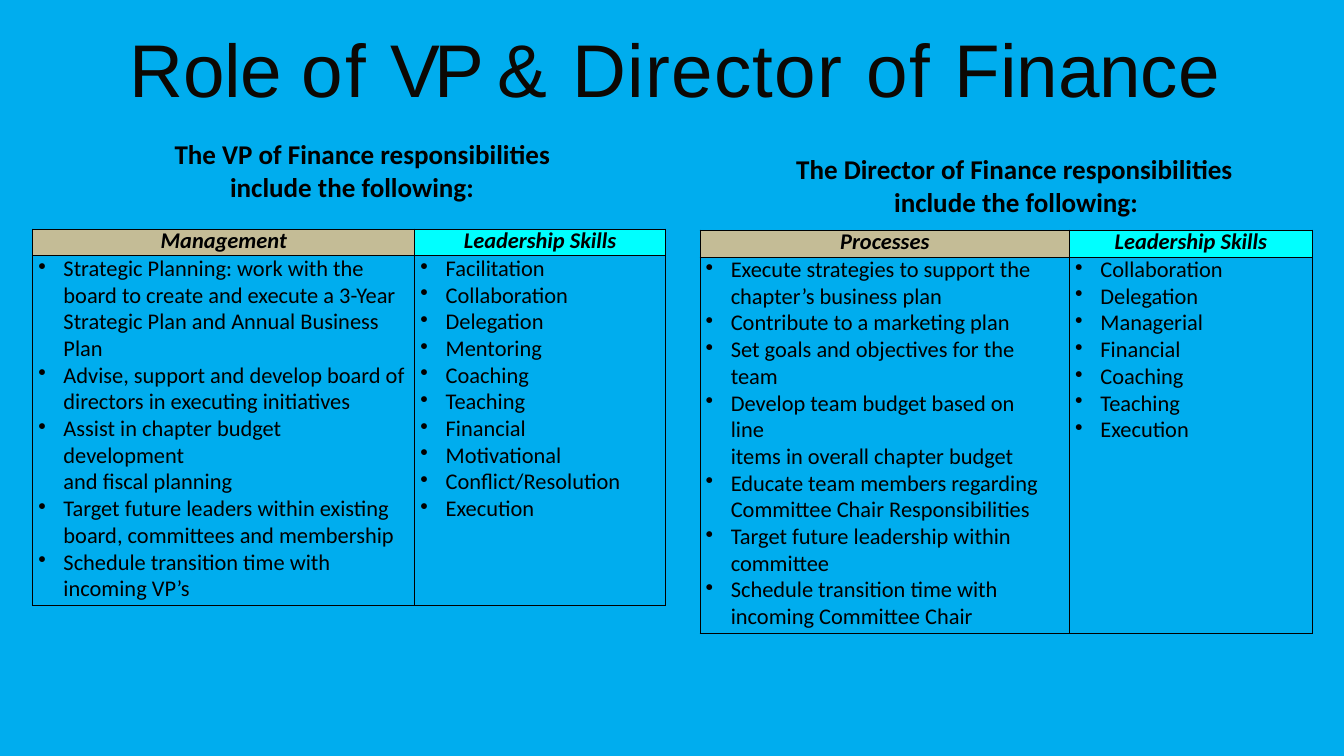
from pptx import Presentation
from pptx.dml.color import RGBColor
from pptx.enum.shapes import MSO_SHAPE
from pptx.enum.text import MSO_ANCHOR, MSO_AUTO_SIZE, PP_ALIGN
from pptx.oxml import parse_xml
from pptx.oxml.ns import nsdecls
from pptx.util import Pt

COLORS = {"sky": "00ADEE", "ink": "000000", "title": "0C0804", "tan": "C4BC96", "aqua": "00FFFF"}
WIDTH, HEIGHT = 1440, 810

TITLE = [("Role ", -0.6), ("of ", 1.8), ("VP ", -6), ("& ", 2.1),
         ("Director ", 1.4), ("of ", 1.9), ("Finance", -0.1)]

DIRECTOR_PROCESSES = [
    "•Execute strategies to support the", "chapter’s business plan",
    "•Contribute to a marketing plan",
    "•Set goals and objectives for the\vteam",
    "•Develop team budget based on\vline", "items in overall chapter budget",
    "•Educate team members regarding Committee Chair Responsibilities",
    "•Target future leadership within committee",
    "•Schedule transition time with", "incoming Committee Chair",
]
DIRECTOR_SKILLS = ["•Collaboration", "•Delegation", "•Managerial", "•Financial",
                   "•Coaching", "•Teaching", "•Execution"]
VP_MANAGEMENT = [
    "•Strategic Planning: work with the", "board to create and execute a 3-Year",
    "Strategic Plan and Annual Business Plan",
    "•Advise, support and develop board of directors in executing initiatives",
    "•Assist in chapter budget\vdevelopment", "and fiscal planning",
    "•Target future leaders within existing board, committees and membership",
    "•Schedule transition time with", "incoming VP’s",
]
VP_SKILLS = ["•Facilitation", "•Collaboration", "•Delegation", "•Mentoring", "•Coaching",
             "•Teaching", "•Financial", "•Motivational", "•Conflict/Resolution", "•Execution"]


def color(name):
    return RGBColor.from_string(COLORS[name])


def write(para, text, *, size=24, font="Calibri", ink="ink", bold=False, italic=False,
          align=PP_ALIGN.LEFT, leading=None, before=0, left=0, first=0, bullet=False):
    """Fill a paragraph with a string or with (string, letter spacing) spans."""
    para.alignment = align
    para.space_before = Pt(before)
    if leading:
        para.line_spacing = leading
    properties = para._p.get_or_add_pPr()
    properties.set("marL", str(Pt(left)))
    properties.set("indent", str(Pt(first)))
    kind = '<a:buChar {} char="•"/>' if bullet else "<a:buNone {}/>"
    properties.append(parse_xml(kind.format(nsdecls("a"))))
    spans = [(text, 0)] if isinstance(text, str) else text
    for index, (words, spacing) in enumerate(spans):
        for part, piece in enumerate(words.split("\v")):
            if part:
                para.add_line_break()
            span = para.add_run()
            span.text = piece
            span.font.size, span.font.name = Pt(size), font
            span.font.bold, span.font.italic = bold, italic
            span.font.color.rgb = color(ink)
            if spacing:
                span.font._element.set("spc", str(round(spacing * 100)))


class Page:
    """Holds the style and the current slide."""

    def __init__(self, deck):
        self.leading = Pt(28.6)
        self.page = deck.slides.add_slide(deck.slide_layouts[5])
        self.shapes = self.page.shapes

    def backdrop(self, fill):
        shape = self.shapes.add_shape(MSO_SHAPE.RECTANGLE, 0, 0, Pt(WIDTH), Pt(HEIGHT))
        shape.shadow.inherit = False
        shape.fill.solid()
        shape.fill.fore_color.rgb = color(fill)
        shape.line.fill.background()
        shape.element.getparent().insert(2, shape.element)

    def frame(self, box, top):
        frame = box.text_frame
        frame.word_wrap = True
        frame.auto_size = MSO_AUTO_SIZE.NONE
        frame.vertical_anchor = MSO_ANCHOR.TOP
        frame.margin_left = frame.margin_right = frame.margin_bottom = 0
        frame.margin_top = Pt(top)
        return frame.paragraphs[0]

    def title(self, text, left, top, width, height):
        box = self.shapes.title
        box.left, box.top, box.width, box.height = Pt(left), Pt(top), Pt(width), Pt(height)
        write(self.frame(box, 24), text, size=80, font="Arial", ink="title", left=109.5)

    def heading(self, text, left, top, width, height, indent):
        box = self.shapes.add_textbox(Pt(left), Pt(top), Pt(width), Pt(height))
        write(self.frame(box, 1), text, size=29, bold=True, leading=1.01, before=0.8,
              left=indent, first=-indent)

    def cell(self, cell, lines, fill=None, **style):
        cell.margin_left = cell.margin_right = cell.margin_top = cell.margin_bottom = 0
        borders = cell._tc.get_or_add_tcPr()
        for side in "LRTB":
            borders.append(parse_xml(
                f'<a:ln{side} {nsdecls("a")} w="{Pt(1)}"><a:solidFill>'
                f'<a:srgbClr val="{COLORS["ink"]}"/></a:solidFill></a:ln{side}>'))
        if fill:
            cell.fill.solid()
            cell.fill.fore_color.rgb = color(fill)
        else:
            cell.fill.background()
        frame = cell.text_frame
        for index, line in enumerate(lines):
            para = frame.add_paragraph() if index else frame.paragraphs[0]
            bullet = line.startswith("•")
            indent = {} if fill else {"left": 33, "first": -27 if bullet else 0}
            write(para, line.removeprefix("•"), bullet=bullet, **indent, **style)

    def table(self, columns, left, top, widths, heights):
        table = self.shapes.add_table(2, len(columns), Pt(left), Pt(top),
                                      Pt(sum(widths)), Pt(sum(heights))).table
        table.first_row = table.horz_banding = False
        for row, height in zip(table.rows, heights):
            row.height = Pt(height)
        for index, (header, fill, lines) in enumerate(columns):
            table.columns[index].width = Pt(widths[index])
            self.cell(table.cell(0, index), [header], fill, bold=True, italic=True,
                      align=PP_ALIGN.CENTER, leading=Pt(27.6))
            self.cell(table.cell(1, index), lines, leading=self.leading)


def main():
    deck = Presentation()
    deck.slide_width, deck.slide_height = Pt(WIDTH), Pt(HEIGHT)
    page = Page(deck)
    page.backdrop("sky")
    page.title(TITLE, 29.5, 0, 1380, 146)
    page.heading("The VP of Finance responsibilities include the following:",
                 187, 146, 417, 71, 59.5)
    page.heading("The Director of Finance responsibilities include the following:",
                 853, 162.5, 475, 73, 105)
    page.table([("Processes", "tan", DIRECTOR_PROCESSES),
                ("Leadership Skills", "aqua", DIRECTOR_SKILLS)],
               750, 246.5, (396, 260), (28.8, 403))
    page.table([("Management", "tan", VP_MANAGEMENT),
                ("Leadership Skills", "aqua", VP_SKILLS)],
               35, 245.5, (409.5, 268.5), (28.5, 374.5))
    deck.save("out.pptx")


if __name__ == "__main__":
    main()
